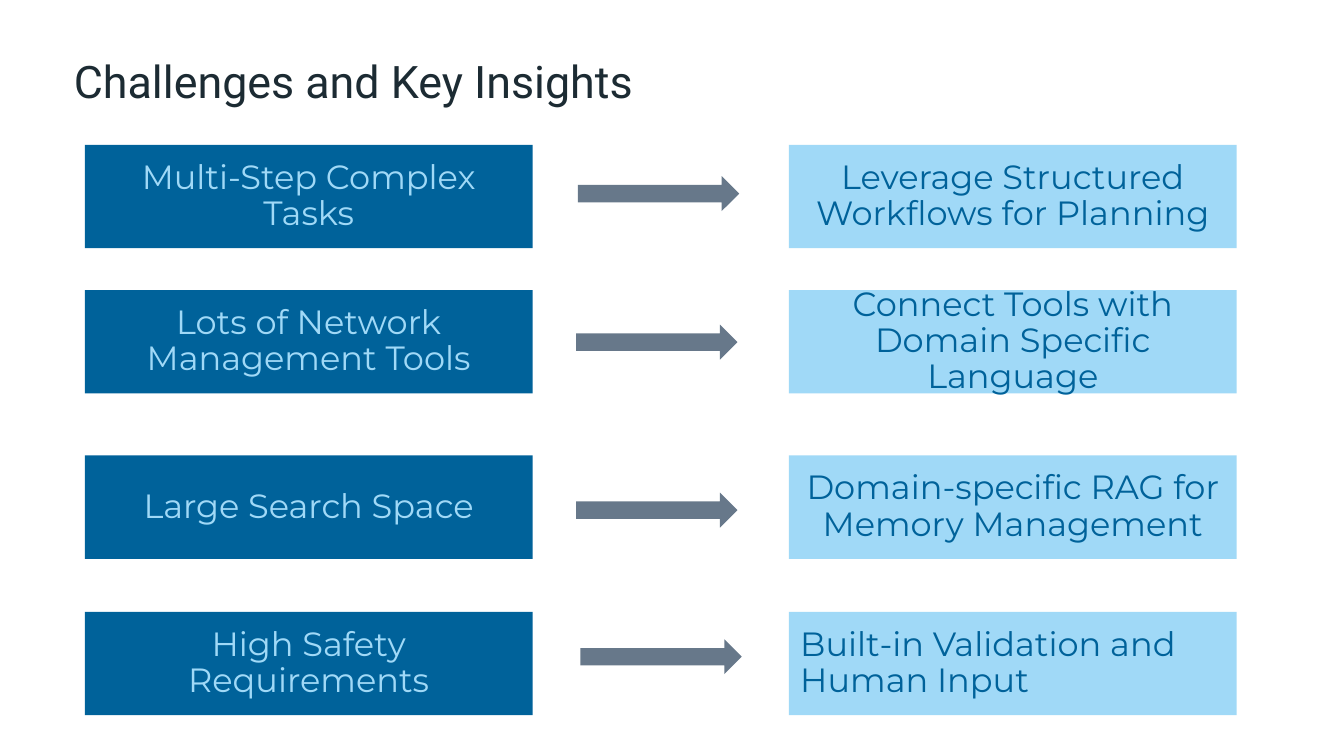
import pptx
import pptx.util
import pptx.dml.color
import pptx.enum.shapes
import pptx.enum.text

Pt = pptx.util.Pt
Kind = pptx.enum.shapes.MSO_SHAPE
Align = pptx.enum.text.PP_ALIGN

NAVY, SKY, SLATE, INK = "00629A", "A0D9F7", "67788A", "1C2B33"


def tint(hue):
    return pptx.dml.color.RGBColor.from_string(hue)


def write(shape, text, size=18, font="Montserrat", hue=INK,
          align=Align.CENTER, space=0.9, inset=6):
    frame = shape.text_frame
    frame.word_wrap = True
    frame.vertical_anchor = pptx.enum.text.MSO_ANCHOR.MIDDLE
    frame.margin_left = frame.margin_right = Pt(inset)
    frame.margin_top = frame.margin_bottom = Pt(inset)
    para = frame.paragraphs[0]
    para.alignment = align
    para.line_spacing = space
    run = para.add_run()
    run.text = text
    run.font.size = Pt(size)
    run.font.name = font
    run.font.color.rgb = tint(hue)


deck = pptx.Presentation()
deck.slide_width, deck.slide_height = Pt(720), Pt(405)
slide = deck.slides.add_slide(deck.slide_layouts[6])
shapes = slide.shapes

# Title
title = shapes.add_textbox(Pt(39.6), Pt(24.5), Pt(582), Pt(33))
write(title, "Challenges and Key Insights", size=24, font="Roboto",
      align=Align.LEFT, space=1.15, inset=0)

# Rows: box top, arrow left, arrow top, challenge, insight, insight alignment
rows = [
    (77.6, 309.6, 94.4, "Multi-Step Complex Tasks",
     "Leverage Structured Workflows for Planning", Align.CENTER),
    (155.4, 308.7, 174, "Lots of Network Management Tools",
     "Connect Tools with Domain Specific Language", Align.CENTER),
    (244, 308.7, 264, "Large Search Space",
     "Domain-specific RAG for Memory Management", Align.CENTER),
    (327.8, 311, 342.5, "High Safety Requirements",
     "Built-in Validation and Human Input", Align.LEFT),
]

for top, tail, high, task, idea, side in rows:
    # Challenge box, insight box and the arrow between them
    parts = [
        (Kind.ROUNDED_RECTANGLE, 45.5, top, 239.8, 55.4, NAVY),
        (Kind.ROUNDED_RECTANGLE, 422.7, top, 239.8, 55.4, SKY),
        (Kind.RIGHT_ARROW, tail, high, 86.4, 18.7, SLATE),
    ]
    made = []
    for kind, left, y, wide, tall, hue in parts:
        shape = shapes.add_shape(kind, Pt(left), Pt(y), Pt(wide), Pt(tall))
        shape.shadow.inherit = False
        shape.fill.solid()
        shape.fill.fore_color.rgb = tint(hue)
        shape.line.fill.background()
        if kind == Kind.ROUNDED_RECTANGLE:
            shape.adjustments[0] = 0
        made.append(shape)

    write(made[0], task, hue=SKY)
    write(made[1], idea, hue=NAVY, align=side)

deck.save("out.pptx")
